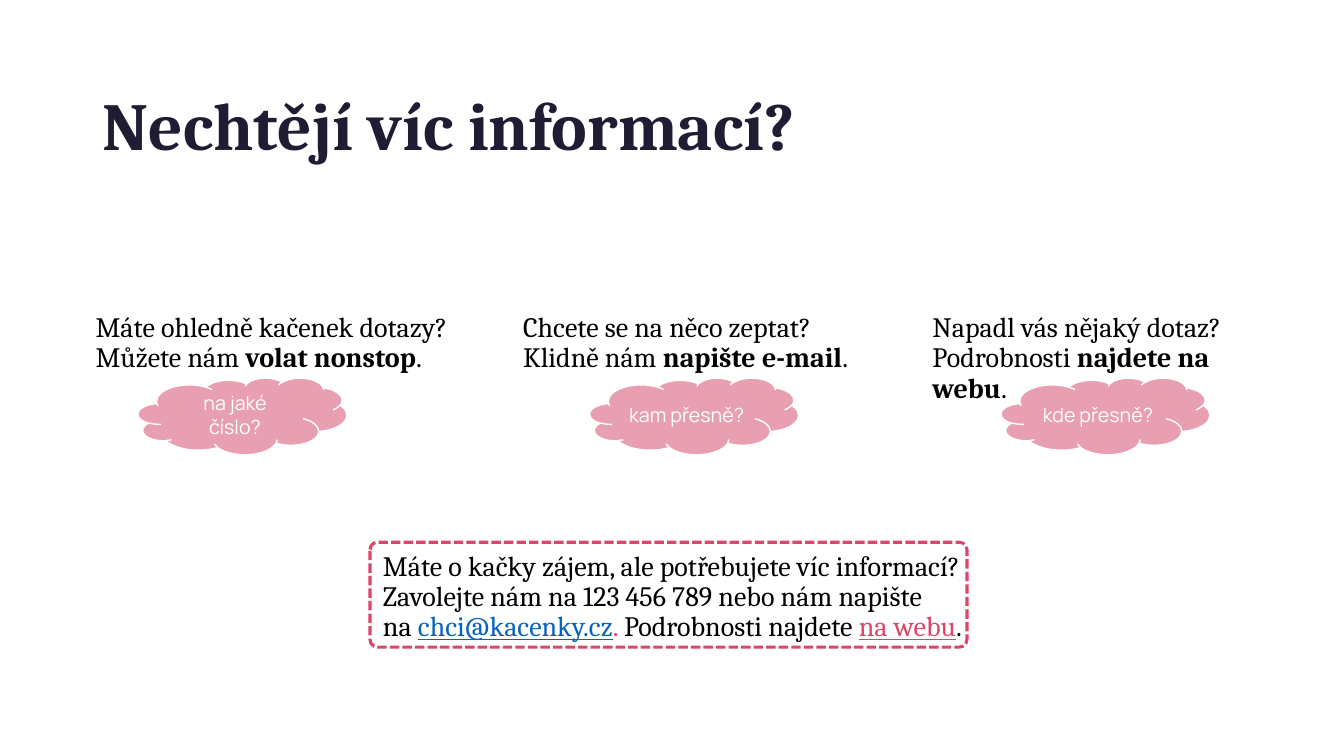
from dataclasses import dataclass

from lxml import etree
from pptx import Presentation
from pptx.dml.color import RGBColor
from pptx.enum.dml import MSO_LINE
from pptx.enum.shapes import MSO_SHAPE
from pptx.enum.text import MSO_ANCHOR, PP_ALIGN
from pptx.oxml.ns import qn
from pptx.util import Inches, Pt

CLOUD = MSO_SHAPE.CLOUD
ROUNDED = MSO_SHAPE.ROUNDED_RECTANGLE
DASH = MSO_LINE.SQUARE_DOT
MIDDLE = MSO_ANCHOR.MIDDLE
LEFT, CENTER = PP_ALIGN.LEFT, PP_ALIGN.CENTER
TITLE_ONLY = 5


@dataclass(frozen=True)
class Theme:
    ink: RGBColor = RGBColor.from_string("000000")
    title: RGBColor = RGBColor.from_string("211C33")
    accent: RGBColor = RGBColor.from_string("DD456A")
    link: RGBColor = RGBColor.from_string("0563C1")
    cloud: RGBColor = RGBColor.from_string("D24166")
    white: RGBColor = RGBColor.from_string("FFFFFF")
    serif: str = "Cambria"
    sans: str = "Manrope"
    title_size: Pt = Pt(48)
    body_size: Pt = Pt(20)
    cloud_size: Pt = Pt(14)


class SlideBuilder:
    def __init__(self, slide, theme):
        self.slide = slide
        self.theme = theme

    def style(self, paragraph, face, size, color, align=LEFT):
        paragraph.alignment = align
        paragraph.font.name = face
        paragraph.font.size = size
        if color is not None:
            paragraph.font.color.rgb = color

    def title(self, text, left, top, width, height):
        theme = self.theme
        heading = self.slide.shapes.title
        heading.left, heading.top = Inches(left), Inches(top)
        heading.width, heading.height = Inches(width), Inches(height)
        frame = heading.text_frame
        frame.text = text
        frame.word_wrap = True
        frame.vertical_anchor = MIDDLE
        paragraph = frame.paragraphs[0]
        paragraph.line_spacing = 0.9
        self.style(paragraph, theme.serif, theme.title_size, theme.title)
        paragraph.font.bold = True

    def body(self, lines, left, top, width, height):
        """Add one paragraph; each line is a list of (text, color, bold, underline)."""
        theme = self.theme
        box = self.slide.shapes.add_textbox(
            Inches(left), Inches(top), Inches(width), Inches(height))
        box.text_frame.word_wrap = True
        paragraph = box.text_frame.paragraphs[0]
        paragraph.line_spacing = 0.9
        self.style(paragraph, theme.serif, theme.body_size, None)
        for number, line in enumerate(lines):
            if number:
                paragraph.add_line_break()
            for text, color, bold, underline in line:
                run = paragraph.add_run()
                run.text = text
                run.font.color.rgb = color
                run.font.bold = bold
                run.font.underline = underline

    def cloud(self, text, left, top, width, height):
        theme = self.theme
        bubble = self.slide.shapes.add_shape(
            CLOUD, Inches(left), Inches(top), Inches(width), Inches(height))
        bubble.shadow.inherit = False
        bubble.fill.solid()
        bubble.fill.fore_color.rgb = theme.cloud
        color = bubble.fill._xPr.find(qn("a:solidFill"))[0]
        etree.SubElement(color, qn("a:alpha")).set("val", "50000")
        bubble.line.color.rgb = theme.white
        bubble.line.width = Pt(1)
        frame = bubble.text_frame
        frame.text = text
        frame.word_wrap = True
        frame.vertical_anchor = MIDDLE
        self.style(frame.paragraphs[0], theme.sans, theme.cloud_size, theme.white, CENTER)

    def dashed_frame(self, left, top, width, height):
        border = self.slide.shapes.add_shape(
            ROUNDED, Inches(left), Inches(top), Inches(width), Inches(height))
        border.shadow.inherit = False
        border.adjustments[0] = 0.07
        border.fill.background()
        border.line.color.rgb = self.theme.accent
        border.line.width = Pt(2.25)
        border.line.dash_style = DASH


def main():
    theme = Theme()
    deck = Presentation()
    deck.slide_width, deck.slide_height = Inches(13.33), Inches(7.5)
    slide = deck.slides.add_slide(deck.slide_layouts[TITLE_ONLY])
    builder = SlideBuilder(slide, theme)

    builder.title("Nechtějí víc informací?", 0.92, 0.71, 11.5, 1.14)

    contacts = [
        (0.85, 3.77, "Máte ohledně kačenek dotazy? Můžete nám ", "volat nonstop",
         1.37, "na jaké číslo?"),
        (5.09, 3.45, "Chcete se na něco zeptat? Klidně nám ", "napište e-mail",
         5.85, "kam přesně?"),
        (9.15, 3.63, "Napadl vás nějaký dotaz? Podrobnosti ", "najdete na webu",
         9.93, "kde přesně?"),
    ]
    for left, width, question, action, cloud_left, remark in contacts:
        sentence = [(question, theme.ink, False, False),
                    (action, theme.ink, True, False),
                    (".", theme.ink, False, False)]
        builder.body([sentence], left, 3.06, width, 0.83)
        builder.cloud(remark, cloud_left, 3.75, 2.07, 0.76)

    summary = [
        [("Máte o kačky zájem, ale potřebujete víc informací? "
          "Zavolejte nám na 123 456 789 nebo nám napište ", theme.ink, False, False)],
        [("na ", theme.ink, False, False),
         ("chci@kacenky.cz", theme.link, False, True),
         (". ", theme.accent, False, False),
         ("Podrobnosti najdete ", theme.ink, False, False),
         ("na webu", theme.accent, False, True),
         (".", theme.ink, False, False)],
    ]
    builder.body(summary, 3.7, 5.43, 6.09, 1.16)
    builder.dashed_frame(3.67, 5.38, 5.92, 1.04)

    deck.save("out.pptx")


if __name__ == "__main__":
    main()
